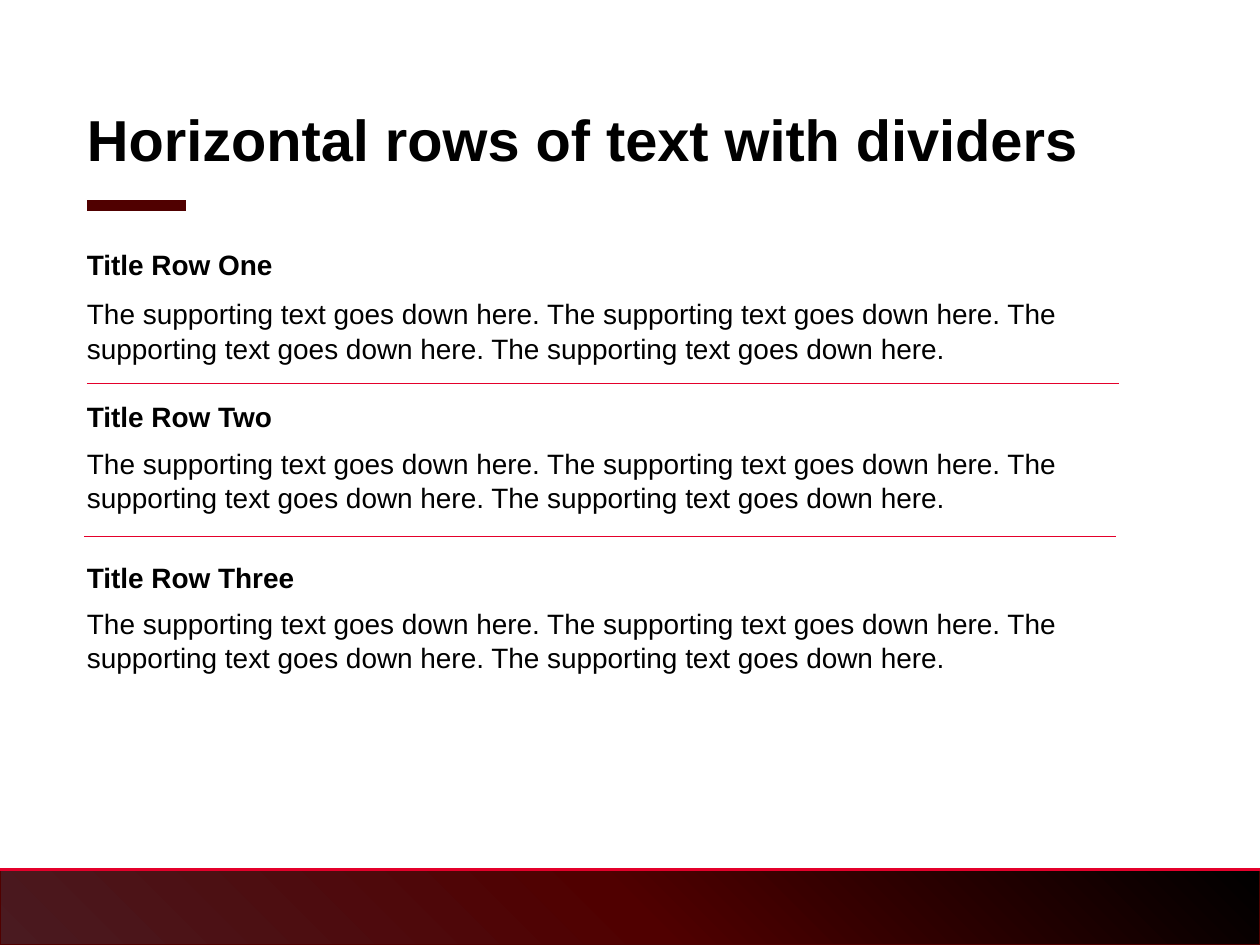
from copy import deepcopy

from lxml import etree
from pptx import Presentation
from pptx import util as u
from pptx.dml.color import RGBColor
from pptx.enum import shapes, text
from pptx.oxml.ns import qn

BLACK = RGBColor(0x00, 0x00, 0x00)
MAROON = RGBColor(0x50, 0x00, 0x00)
PLUM = RGBColor(0x4A, 0x1A, 0x20)
RED = RGBColor(0xE4, 0x00, 0x2B)

deck = Presentation()
deck.slide_width, deck.slide_height = u.Inches(10), u.Inches(7.5)
page = deck.slides.add_slide(deck.slide_layouts[6])

LEFT = 0.69
ROW_WIDTH = 8.71
SUPPORT = " ".join(["The supporting text goes down here."] * 4)


def add_text(words, top, width, height, size, bold=False):
    box = page.shapes.add_textbox(u.Inches(LEFT), u.Inches(top),
                                  u.Inches(width), u.Inches(height))
    frame = box.text_frame
    frame.word_wrap = True
    frame.vertical_anchor = text.MSO_ANCHOR.TOP
    frame.margin_left = frame.margin_right = 0
    frame.margin_top = frame.margin_bottom = 0
    para = frame.paragraphs[0]
    para.text = words
    para.line_spacing = 1.04
    para.font.name = "Arial"
    para.font.size = u.Pt(size)
    para.font.bold = bold
    para.font.color.rgb = BLACK


def add_rule(left, right, y, color, weight):
    rule = page.shapes.add_connector(shapes.MSO_CONNECTOR.STRAIGHT, u.Inches(left),
                                     u.Inches(y), u.Inches(right), u.Inches(y))
    rule.line.color.rgb = color
    rule.line.width = u.Pt(weight)
    etree.SubElement(rule._element.spPr, qn("a:effectLst"))


# Footer band: diagonal gradient from black at the top right
band = page.shapes.add_shape(shapes.MSO_SHAPE.RECTANGLE, 0, u.Inches(6.9),
                             deck.slide_width, u.Inches(0.6))
band.shadow.inherit = False
band.line.color.rgb = MAROON
band.line.width = u.Pt(1.5)
band.fill.gradient()
band.fill.gradient_angle = 225
stop_list = band._element.spPr.find(qn("a:gradFill")).find(qn("a:gsLst"))
stop_list.insert(1, deepcopy(stop_list[0]))
for stop, color, position in zip(band.fill.gradient_stops,
                                 (BLACK, MAROON, PLUM), (0, 0.5, 1)):
    stop.color.rgb = color
    stop.position = position
add_rule(0, 10, 6.9, RED, 1.5)

# Title with its accent bar
add_text("Horizontal rows of text with dividers", 0.8, 8.62, 0.91, 33, bold=True)
add_rule(LEFT, 1.48, 1.63, MAROON, 6)

# Rows: heading, heading top, supporting text top
for heading, heading_top, support_top in (("Title Row One", 1.95, 2.34),
                                          ("Title Row Two", 3.16, 3.53),
                                          ("Title Row Three", 4.44, 4.8)):
    add_text(heading, heading_top, ROW_WIDTH, 0.39, 16, bold=True)
    add_text(SUPPORT, support_top, ROW_WIDTH, 0.63, 16)

# Dividers between the rows
for left, y in ((LEFT, 3.04), (0.67, 4.26)):
    add_rule(left, left + 8.19, y, RED, 0.5)

deck.save("out.pptx")
